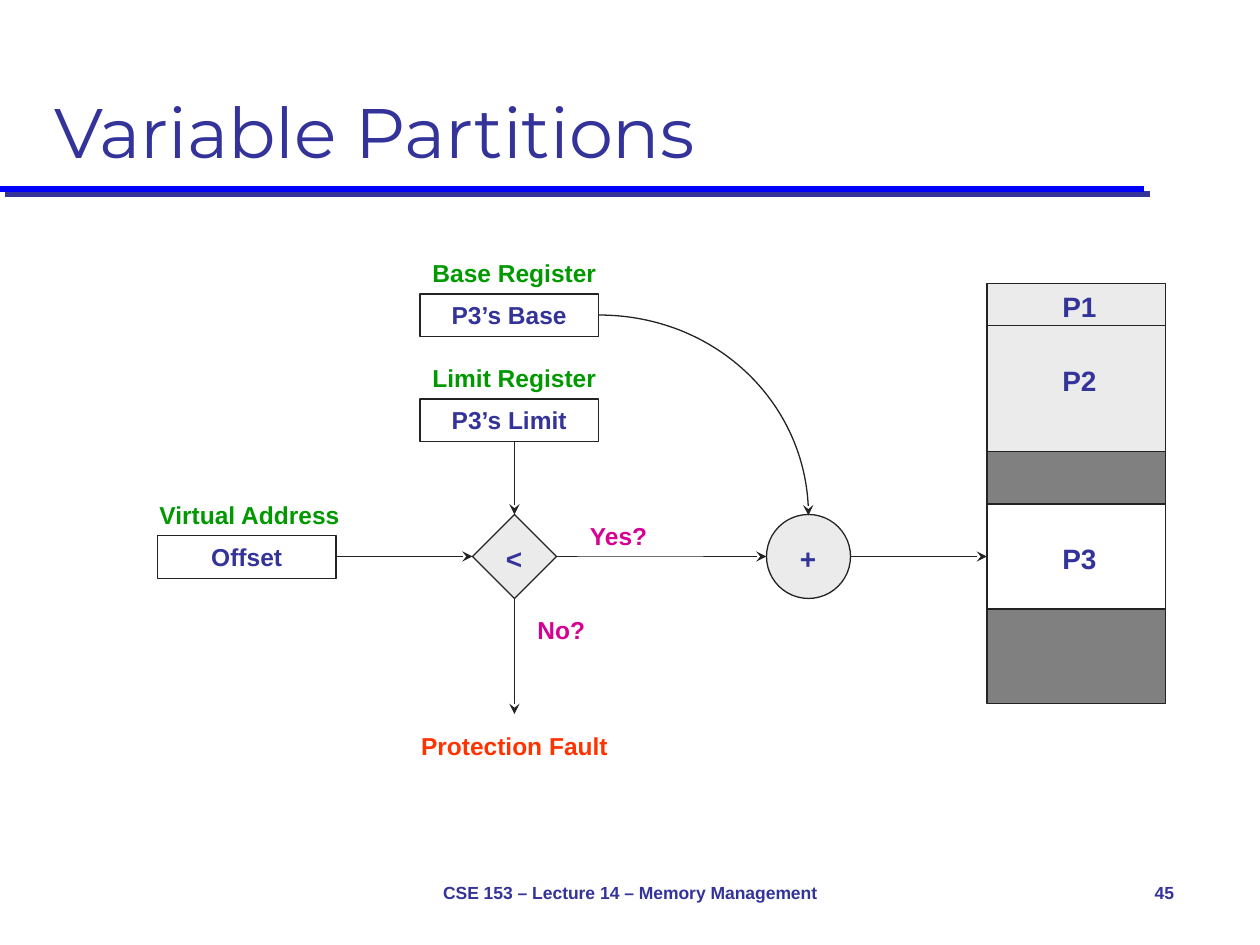
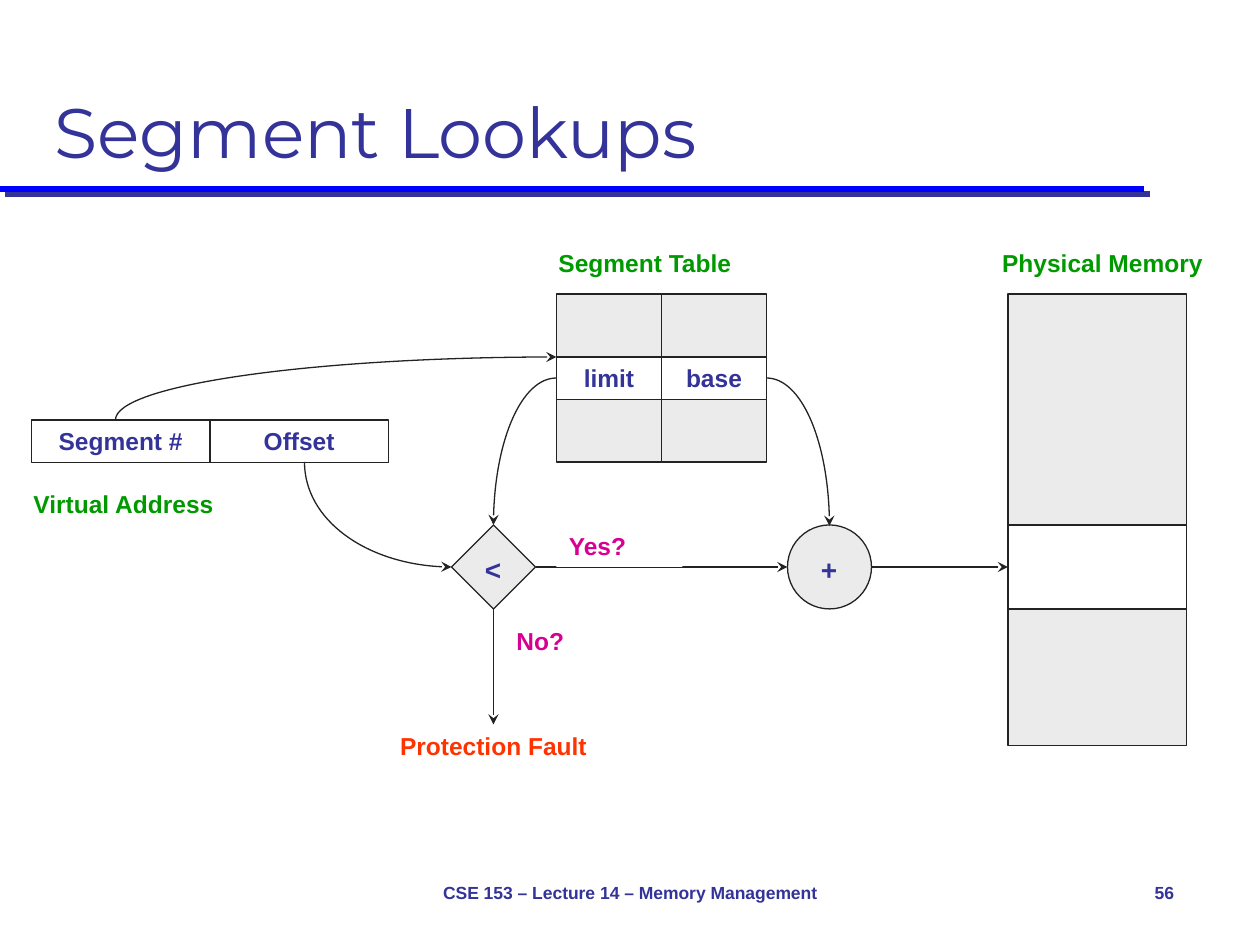
"""Build two lecture slides on address translation."""
import pptx
import pptx.dml.color
import pptx.enum.shapes
import pptx.enum.text
import pptx.oxml.ns
import pptx.util
from lxml import etree

Pt = pptx.util.Pt
RGBColor = pptx.dml.color.RGBColor
MSO_SHAPE = pptx.enum.shapes.MSO_SHAPE
PP_ALIGN = pptx.enum.text.PP_ALIGN
MSO_ANCHOR = pptx.enum.text.MSO_ANCHOR
qn = pptx.oxml.ns.qn

INDIGO = RGBColor(0x33, 0x33, 0x99)
BLUE = RGBColor(0x00, 0x00, 0xFF)
GREEN = RGBColor(0x00, 0x99, 0x00)
MAGENTA = RGBColor(0xD6, 0x00, 0x93)
ORANGE = RGBColor(0xFF, 0x33, 0x00)
INK = RGBColor(0x23, 0x23, 0x23)
WHITE = RGBColor(0xFF, 0xFF, 0xFF)
LIGHT = RGBColor(0xEB, 0xEB, 0xEB)
GREY = RGBColor(0x80, 0x80, 0x80)

FOOTER = "CSE 153 – Lecture 14 – Memory Management"
FIELD_W, FIELD_H = 102, 24.5
LABEL_W, LABEL_H = 132, 24
NODE = 48
MEMORY_GAP = 78
FAULT_TOP = 414
BEND = 0.55


def write(sp, text, size=14, color=INDIGO, align=PP_ALIGN.LEFT,
          anchor=MSO_ANCHOR.TOP, font="Arial", bold=True, wrap=True):
    """Put one formatted run into a shape."""
    tf = sp.text_frame
    tf.word_wrap = wrap
    tf.vertical_anchor = anchor
    p = tf.paragraphs[0]
    p.alignment = align
    r = p.add_run()
    r.text = text
    r.font.size = Pt(size)
    r.font.name = font
    r.font.bold = bold
    r.font.color.rgb = color


def label(s, x, y, w, h, text, fill=None, **style):
    """Add a text box, with a plain fill if one is given."""
    sp = s.shapes.add_textbox(Pt(x), Pt(y), Pt(w), Pt(h))
    if fill is not None:
        sp.fill.solid()
        sp.fill.fore_color.rgb = fill
    write(sp, text, **style)


def caption(s, x, y, text, color=GREEN, w=LABEL_W, align=PP_ALIGN.LEFT):
    """Add a coloured caption on white."""
    label(s, x, y, w, LABEL_H, text, fill=WHITE, color=color, align=align)


def box(s, x, y, w, h, fill=WHITE, text="", kind=MSO_SHAPE.RECTANGLE):
    """Add an outlined shape, with centred text if any is given."""
    sp = s.shapes.add_shape(kind, Pt(x), Pt(y), Pt(w), Pt(h))
    sp.shadow.inherit = False
    sp.fill.solid()
    sp.fill.fore_color.rgb = fill
    sp.line.color.rgb = INK
    sp.line.width = Pt(0.75)
    if text:
        write(sp, text, align=PP_ALIGN.CENTER)


def stack(s, x, y, w, rows):
    """Pile boxes of (height, fill, text) downwards from the top left."""
    for h, fill, text in rows:
        box(s, x, y, w, h, fill, text)
        y += h


def point_line(sp):
    """Give a line its ink and an arrowhead at the end."""
    sp.line.color.rgb = INK
    sp.line.width = Pt(0.75)
    ln = sp.element.spPr.find(qn("a:ln"))
    etree.SubElement(ln, qn("a:tailEnd"), type="stealth")


def straight(s, x0, y0, x1, y1):
    """Add a straight connector without a shadow."""
    kind = pptx.enum.shapes.MSO_CONNECTOR.STRAIGHT
    return s.shapes.add_connector(kind, Pt(x0), Pt(y0), Pt(x1), Pt(y1))


def arrow(s, x0, y0, x1, y1):
    """Add a straight arrow."""
    sp = straight(s, x0, y0, x1, y1)
    point_line(sp)
    etree.SubElement(sp.element.spPr, qn("a:effectLst"))


def curve(s, x0, y0, x1, y1, sideways):
    """Add a quarter-ellipse arrow that leaves sideways or vertically."""
    dx, dy = BEND * (x1 - x0), BEND * (y1 - y0)
    if sideways:
        controls = [(x0 + dx, y0), (x1, y1 - dy)]
    else:
        controls = [(x0, y0 + dy), (x1 - dx, y1)]
    builder = s.shapes.build_freeform(Pt(x0), Pt(y0))
    points = [(Pt(x), Pt(y)) for x, y in controls + [(x1, y1)]]
    builder.add_line_segments(points, close=False)
    sp = builder.convert_to_shape()
    sp.shadow.inherit = False
    sp.fill.background()
    point_line(sp)
    outline = next(sp.element.iter(qn("a:path")))
    bezier = etree.SubElement(outline, qn("a:cubicBezTo"))
    for segment in outline.findall(qn("a:lnTo")):
        bezier.append(segment[0])
        outline.remove(segment)


def node(s, x, y, kind, sign, sign_w):
    """Add an operator node with its sign."""
    box(s, x, y, NODE, NODE, LIGHT, kind=kind)
    label(s, x + 12, y + 12, sign_w, 26.5, sign, size=16)


def field(s, x, y, text):
    """Add one register field."""
    box(s, x, y, FIELD_W, FIELD_H, text=text)


def frame(prs, title, number):
    """Start a slide with its title, shadowed rule and footer."""
    s = prs.slides.add_slide(prs.slide_layouts[5])
    rule = straight(s, 0, 108, 654, 108)
    rule.line.color.rgb = BLUE
    rule.line.width = Pt(3.5)
    effects = etree.SubElement(rule.element.spPr, qn("a:effectLst"))
    shadow = etree.SubElement(effects, qn("a:outerShdw"), dist=str(Pt(4.2)),
                              dir="2700000", algn="ctr", rotWithShape="0")
    etree.SubElement(shadow, qn("a:srgbClr"), val=str(INDIGO))
    for x, w, text, align in ((246, 228, FOOTER, PP_ALIGN.CENTER),
                              (630, 48, str(number), PP_ALIGN.RIGHT)):
        label(s, x, 492, w, 36, text, size=10, align=align,
              anchor=MSO_ANCHOR.MIDDLE, wrap=False)
    sp = s.shapes.title
    sp.left, sp.top, sp.width, sp.height = Pt(24), Pt(12), Pt(672), Pt(90)
    write(sp, title, size=40, anchor=MSO_ANCHOR.BOTTOM, font="Montserrat",
          bold=False)
    return s


def limit_check(s, x, y, adder_x):
    """Draw the comparison, its two outcomes and the adder from the diamond."""
    middle = y + NODE / 2
    centre = x + NODE / 2
    adder_end = adder_x + NODE
    node(s, x, y, MSO_SHAPE.DIAMOND, "<", 36)
    node(s, adder_x, y, MSO_SHAPE.OVAL, "+", 30)
    arrow(s, x + NODE, middle, adder_x, middle)
    arrow(s, adder_end, middle, adder_end + MEMORY_GAP, middle)
    arrow(s, centre, y + NODE, centre, y + NODE + 66)
    caption(s, x - 42, FAULT_TOP, "Protection Fault", ORANGE,
            align=PP_ALIGN.CENTER)
    caption(s, x + 60, y, "Yes?", MAGENTA, w=72)
    caption(s, x + 30, y + 54, "No?", MAGENTA, w=72)


def registers(s, x, y):
    """Draw the base and limit registers, one above the other."""
    for i, name in enumerate(("Base", "Limit")):
        top = y + 60 * i
        caption(s, x, top, f"{name} Register")
        field(s, x, top + LABEL_H, f"P3’s {name}")


def partitions(s, x, y):
    """Draw memory split into processes and gaps."""
    stack(s, x, y, FIELD_W, [(24, LIGHT, ""), (72, LIGHT, ""), (30, GREY, ""),
                             (60, WHITE, ""), (54, GREY, "")])
    for name, dy in (("P1", 0), ("P2", 42), ("P3", 144)):
        label(s, x + 36, y + dy, 36, 26.5, name, size=16)


def segment_table(s, x, y):
    """Draw the segment table with its limit and base columns."""
    caption(s, x - 6, y - 30, "Segment Table")
    for i, name in enumerate(("limit", "base")):
        stack(s, x + 60 * i, y, 60, [(36, LIGHT, ""), (FIELD_H, WHITE, name),
                                     (35.5, LIGHT, "")])


def physical_memory(s, x, y):
    """Draw physical memory with one segment picked out."""
    caption(s, x - 12, y - 30, "Physical Memory", align=PP_ALIGN.CENTER)
    stack(s, x, y, FIELD_W, [(132, LIGHT, ""), (48, WHITE, ""),
                             (78, LIGHT, "")])


def variable_partitions(prs):
    """Build the slide on variable partitions."""
    s = frame(prs, "Variable Partitions", 45)
    registers(s, 240, 144)
    caption(s, 84, 282, "Virtual Address")
    field(s, 90, 306, "Offset")
    partitions(s, 564, 162)
    limit_check(s, 270, 294, 438)
    arrow(s, 294, 252, 294, 294)
    arrow(s, 192, 318, 270, 318)
    curve(s, 342, 180, 462, 294.5, sideways=True)


def segment_lookups(prs):
    """Build the slide on segment lookups."""
    s = frame(prs, "Segment Lookups", 56)
    for i, name in enumerate(("Segment #", "Offset")):
        field(s, 18 + FIELD_W * i, 240, name)
    caption(s, 12, 276, "Virtual Address")
    segment_table(s, 318, 168)
    physical_memory(s, 576, 168)
    limit_check(s, 258, 300, 450)
    curve(s, 66, 240, 318, 204, sideways=False)
    curve(s, 174, 264, 258, 324, sideways=False)
    curve(s, 318, 216, 282, 300, sideways=True)
    curve(s, 438, 216, 474, 300.5, sideways=True)


def main():
    """Build and save the presentation."""
    prs = pptx.Presentation()
    prs.slide_width, prs.slide_height = Pt(720), Pt(540)
    variable_partitions(prs)
    segment_lookups(prs)
    prs.save("out.pptx")


if __name__ == "__main__":
    main()
